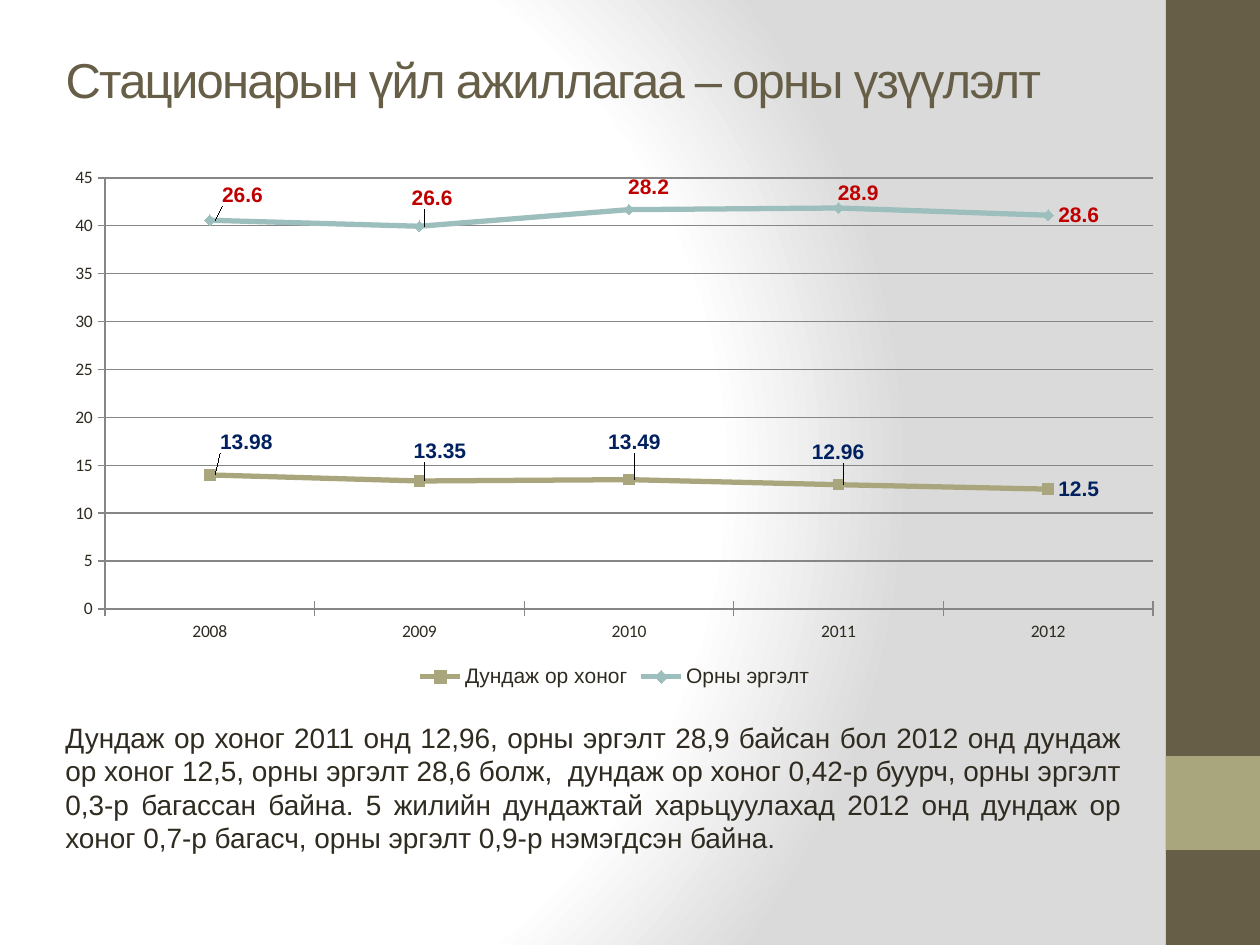
from pptx import Presentation
from pptx.chart.data import CategoryChartData
from pptx.dml.color import RGBColor
from pptx.enum.chart import (XL_CHART_TYPE, XL_LABEL_POSITION, XL_LEGEND_POSITION,
                             XL_MARKER_STYLE, XL_TICK_MARK)
from pptx.enum.shapes import MSO_SHAPE
from pptx.enum.text import MSO_ANCHOR, MSO_AUTO_SIZE, PP_ALIGN
from pptx.oxml import parse_xml
from pptx.oxml.ns import nsdecls, qn
from pptx.util import Pt

EMU_PER_PX = 914400 / 126
BROWN = RGBColor(0x67, 0x5E, 0x47)
OLIVE = RGBColor(0xA9, 0xA5, 0x7C)
TEAL = RGBColor(0x9C, 0xBE, 0xBD)
INK = RGBColor(0x2F, 0x2B, 0x20)
NAVY = RGBColor(0x00, 0x20, 0x60)
RED = RGBColor(0xC0, 0x00, 0x00)
GRAY = RGBColor(0x86, 0x86, 0x86)
WHITE = RGBColor(0xFF, 0xFF, 0xFF)
LIGHT_GRAY = RGBColor(0xDA, 0xDA, 0xDA)

CHART_BOX = (53, 158, 1124, 535)
PLOT_BOX = (105, 178, 1048, 431)
YEARS = ["2008", "2009", "2010", "2011", "2012"]
# Label shifts are px away from the place right of each point.
SERIES = [
    dict(name="Дундаж ор хоног", values=[13.98, 13.35, 13.49, 12.96, 12.5],
         color=OLIVE, marker=XL_MARKER_STYLE.SQUARE, label_color=NAVY,
         label_shifts=[(0, -33), (-16, -30), (-31, -37), (-37, -32)]),
    dict(name="Орны эргэлт", values=[26.6, 26.6, 28.2, 28.9, 28.6],
         color=TEAL, marker=XL_MARKER_STYLE.DIAMOND, label_color=RED,
         label_shifts=[(2, -25), (-18, -28), (-11, -22), (-11, -15)]),
]
TITLE = "Стационарын үйл ажиллагаа – орны үзүүлэлт"
SUMMARY = (
    "Дундаж ор хоног 2011 онд 12,96, орны эргэлт 28,9 байсан бол 2012 онд дундаж "
    "ор хоног 12,5, орны эргэлт 28,6 болж,  дундаж ор хоног 0,42-р буурч, орны эргэлт "
    "0,3-р багассан байна. 5 жилийн дундажтай харьцуулахад 2012 онд дундаж ор "
    "хоног 0,7-р багасч, орны эргэлт 0,9-р нэмэгдсэн байна.")


def px(*lengths):
    return [round(length * EMU_PER_PX) for length in lengths]


def style_font(font, size, color, name="Arial", bold=False):
    font.size = Pt(size)
    font.name = name
    font.bold = bold
    font.color.rgb = color


def set_background(slide):
    """Fill the slide with a circular gradient from white to light gray."""
    slide.background.fill.gradient()
    stops = "".join(
        f'<a:gs pos="{position * 1000}"><a:srgbClr val="{color}"/></a:gs>'
        for position, color in [(0, WHITE), (75, WHITE), (100, LIGHT_GRAY)])
    gradient = parse_xml(
        f'<a:gradFill {nsdecls("a")} rotWithShape="1"><a:gsLst>{stops}</a:gsLst>'
        '<a:path path="circle"><a:fillToRect l="20000" t="50000" r="100000" b="50000"/>'
        '</a:path></a:gradFill>')
    default = slide._element.find(".//" + qn("a:gradFill"))
    default.getparent().replace(default, gradient)


def add_bar(slide, top, height, color):
    bar = slide.shapes.add_shape(MSO_SHAPE.RECTANGLE, *px(1166, top, 94, height))
    bar.shadow.inherit = False
    bar.fill.solid()
    bar.fill.fore_color.rgb = color
    bar.line.fill.background()


def set_title(slide):
    title = slide.shapes.title
    title.left, title.top, title.width, title.height = px(53, 0, 1134, 158)
    frame = title.text_frame
    frame.auto_size = MSO_AUTO_SIZE.NONE
    frame.vertical_anchor = MSO_ANCHOR.MIDDLE
    paragraph = frame.paragraphs[0]
    paragraph.alignment = PP_ALIGN.LEFT
    run = paragraph.add_run()
    run.text = TITLE
    style_font(run.font, 28, BROWN)
    run.font._element.set("spc", "-100")


def add_summary(slide):
    frame = slide.shapes.add_textbox(*px(53, 714, 1081, 149)).text_frame
    frame.word_wrap = True
    frame.auto_size = MSO_AUTO_SIZE.SHAPE_TO_FIT_TEXT
    paragraph = frame.paragraphs[0]
    paragraph.alignment = PP_ALIGN.JUSTIFY
    run = paragraph.add_run()
    run.text = SUMMARY
    style_font(run.font, 16, INK)


def manual_layout(modes="", **fractions):
    values = "".join(f'<c:{key} val="{value:.4f}"/>' for key, value in fractions.items())
    return parse_xml(f'<c:layout {nsdecls("c")}><c:manualLayout>{modes}{values}'
                     '</c:manualLayout></c:layout>')


def place_plot(chart):
    left, top, width, height = CHART_BOX
    plot_left, plot_top, plot_width, plot_height = PLOT_BOX
    modes = '<c:layoutTarget val="inner"/><c:xMode val="edge"/><c:yMode val="edge"/>'
    plot_area = chart._chartSpace.chart.plotArea
    for layout in plot_area.findall(qn("c:layout")):
        plot_area.remove(layout)
    plot_area.insert(0, manual_layout(
        modes, x=(plot_left - left) / width, y=(plot_top - top) / height,
        w=plot_width / width, h=plot_height / height))


def style_axis(axis):
    axis.major_tick_mark = XL_TICK_MARK.CROSS
    axis.minor_tick_mark = XL_TICK_MARK.NONE
    axis.format.line.color.rgb = GRAY
    axis.format.line.width = Pt(0.75)


def style_series(series, details):
    series.smooth = False
    series.format.line.color.rgb = details["color"]
    series.format.line.width = Pt(3)
    series.marker.style = details["marker"]
    series.marker.size = 6
    series.marker.format.fill.solid()
    series.marker.format.fill.fore_color.rgb = details["color"]
    series.marker.format.line.color.rgb = details["color"]

    labels = series.data_labels
    labels.show_value = True
    labels.position = XL_LABEL_POSITION.RIGHT
    style_font(labels.font, 12, details["label_color"], bold=True)
    for index, (shift_x, shift_y) in enumerate(details["label_shifts"]):
        label = series.points[index].data_label
        label.position = XL_LABEL_POSITION.RIGHT
        style_font(label.font, 12, details["label_color"], bold=True)
    for element, (shift_x, shift_y) in zip(
            labels._element.findall(qn("c:dLbl")), details["label_shifts"]):
        element.insert(1, manual_layout(x=shift_x / CHART_BOX[2], y=shift_y / CHART_BOX[3]))


def add_bed_chart(slide):
    data = CategoryChartData()
    data.categories = YEARS
    for details in SERIES:
        data.add_series(details["name"], details["values"])
    chart = slide.shapes.add_chart(
        XL_CHART_TYPE.LINE_MARKERS_STACKED, *px(*CHART_BOX), data).chart
    chart.has_title = False
    style_font(chart.font, 10, INK, "Calibri")
    chart.has_legend = True
    chart.legend.position = XL_LEGEND_POSITION.BOTTOM
    chart.legend.include_in_layout = False
    style_font(chart.legend.font, 12, INK)

    style_axis(chart.category_axis)
    value_axis = chart.value_axis
    style_axis(value_axis)
    value_axis.minimum_scale, value_axis.maximum_scale, value_axis.major_unit = 0, 45, 5
    value_axis.has_major_gridlines = True
    value_axis.major_gridlines.format.line.color.rgb = GRAY
    value_axis.major_gridlines.format.line.width = Pt(0.75)
    chart.plots[0].vary_by_categories = False
    for series, details in zip(chart.plots[0].series, SERIES):
        style_series(series, details)
    place_plot(chart)


def main():
    presentation = Presentation()
    presentation.slide_width, presentation.slide_height = px(1260, 945)
    slide = presentation.slides.add_slide(presentation.slide_layouts[5])
    set_background(slide)
    add_bar(slide, 0, 945, BROWN)
    add_bar(slide, 756, 94, OLIVE)
    set_title(slide)
    add_bed_chart(slide)
    add_summary(slide)
    presentation.save("out.pptx")


if __name__ == "__main__":
    main()
